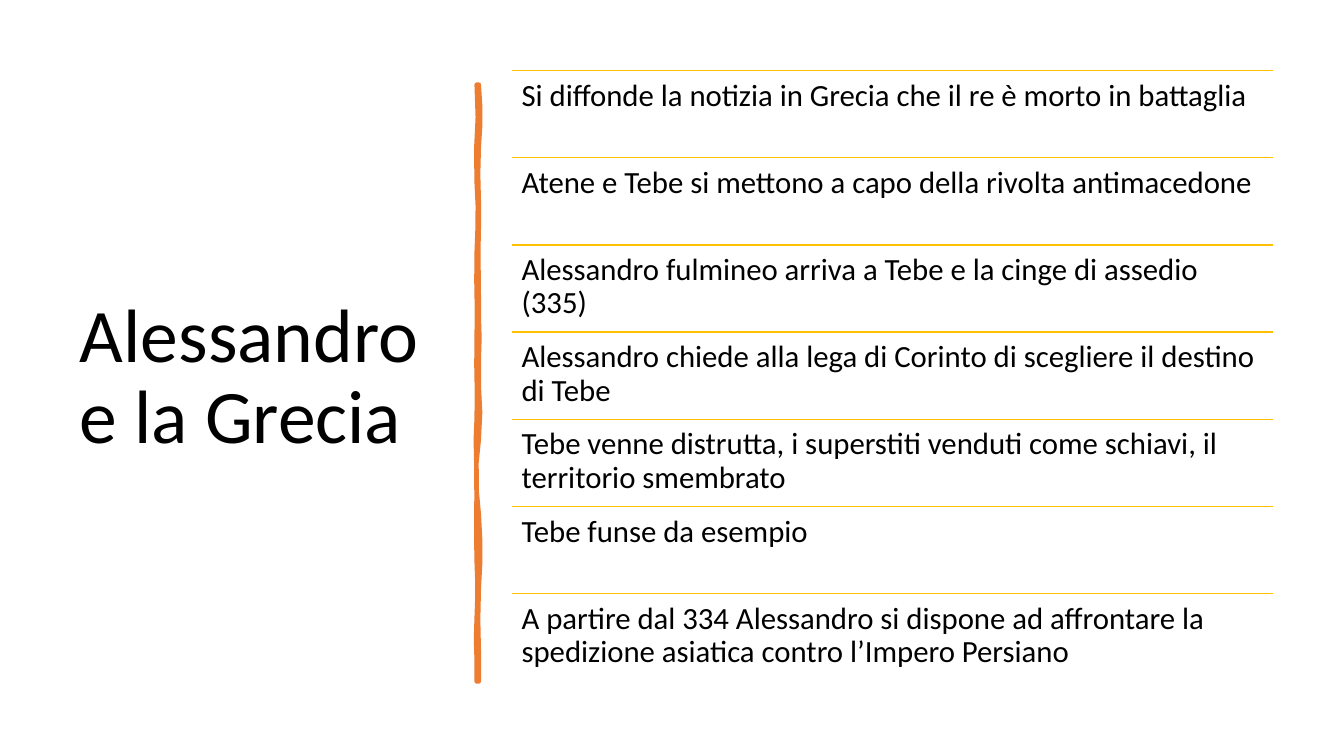
from dataclasses import dataclass

from lxml import etree
from pptx import Presentation
from pptx.dml.color import RGBColor
from pptx.enum.shapes import MSO_CONNECTOR
from pptx.enum.text import MSO_ANCHOR
from pptx.oxml.ns import qn
from pptx.util import Pt

PX = 4572  # EMU per px, 200 px to the inch
STEPS = 3  # points drawn along each wave
LINE = MSO_CONNECTOR.STRAIGHT
TOP, MIDDLE = MSO_ANCHOR.TOP, MSO_ANCHOR.MIDDLE


@dataclass(frozen=True)
class Theme:
    font: str = "Calibri"
    ink: str = "000000"
    brush: str = "ED7D31"
    rule: str = "FFC000"
    title: int = 54
    body: int = 22
    stroke: float = 3.25
    thin: int = 1


THEME = Theme()

FACTS = [
    "Si diffonde la notizia in Grecia che il re è morto in battaglia",
    "Atene e Tebe si mettono a capo della rivolta antimacedone",
    "Alessandro fulmineo arriva a Tebe e la cinge di assedio (335)",
    "Alessandro chiede alla lega di Corinto di scegliere il destino di Tebe",
    "Tebe venne distrutta, i superstiti venduti come schiavi, il territorio smembrato",
    "Tebe funse da esempio",
    "A partire dal 334 Alessandro si dispone ad affrontare la "
    "spedizione asiatica contro l’Impero Persiano",
]

# Waves of the brush edges: end below the top, then two sideways pulls, in px
DOWN = [(124, 4, 4), (284, -4, 2), (420, -2, 0), (544, -2, 4),
        (704, -4, 8), (852, -8, -6), (1000, 4, 4), (1184, -4, 2)]
UP = [(1058, 2, -4), (946, 2, 2), (786, -2, 0), (662, 0, -4),
      (502, 2, -2), (332, 2, -2), (194, 2, 4), (0, -6, 8)]


def emu(*vals):
    return [round(v * PX) for v in vals]


def color(code):
    return RGBColor.from_string(code)


def add_text(slide, text, box, size, anchor=TOP, pad=(20, 10)):
    frame = slide.shapes.add_textbox(*emu(*box)).text_frame
    frame.word_wrap = True
    frame.vertical_anchor = anchor
    frame.margin_left = frame.margin_right = emu(pad[0])[0]
    frame.margin_top = frame.margin_bottom = emu(pad[1])[0]
    para = frame.paragraphs[0]
    para.line_spacing = 0.9
    run = para.add_run()
    run.text = text
    run.font.name = THEME.font
    run.font.size = Pt(size)
    run.font.color.rgb = color(THEME.ink)


def add_rule(slide, x, y, width):
    rule = slide.shapes.add_connector(LINE, *emu(x, y, x + width, y))
    rule.line.color.rgb = color(THEME.rule)
    rule.line.width = Pt(THEME.thin)
    etree.SubElement(rule._element.spPr, qn("a:effectLst"))


def trace(x, top, start, waves):
    """Points of a wavy edge, each wave pulled sideways as a cubic curve."""
    points = []
    for end, first, last in waves:
        for step in range(1, STEPS + 1):
            t = step / STEPS
            pull = 3 * t * (1 - t) * ((1 - t) * first + t * last)
            points.append(emu(x + pull, top + start + t * (end - start)))
        start = end
    return points


def add_divider(slide, box):
    left, top, width, height = box
    right = left + width
    pen = slide.shapes.build_freeform(*emu(right, top), scale=1.0)
    pen.add_line_segments(trace(right, top, 0, DOWN), close=False)
    pen.add_line_segments([emu(left, top + height)]
                          + trace(left, top, height, UP), close=True)
    brush = pen.convert_to_shape()
    brush.shadow.inherit = False
    brush.fill.solid()
    brush.fill.fore_color.rgb = color(THEME.brush)
    brush.line.color.rgb = color(THEME.brush)
    brush.line.width = Pt(THEME.stroke)


def add_facts(slide, box, facts):
    x, y, width, height = box
    pitch = height // len(facts)
    for row, fact in enumerate(facts):
        top = y + row * pitch
        add_rule(slide, x, top, width)
        add_text(slide, fact, (x, top, width, pitch), THEME.body, pad=(18, 18))


def main():
    deck = Presentation()
    deck.slide_width, deck.slide_height = emu(2667, 1500)
    slide = deck.slides.add_slide(deck.slide_layouts[6])
    # Title on the left
    add_text(slide, "Alessandro e la Grecia", (139, 140, 748, 1222),
             THEME.title, anchor=MIDDLE)
    # Brush stroke between title and list
    add_divider(slide, (946, 168, 4, 1184))
    # Ruled list on the right
    add_facts(slide, (1017, 140, 1510, 1211), FACTS)
    deck.save("out.pptx")


if __name__ == "__main__":
    main()
